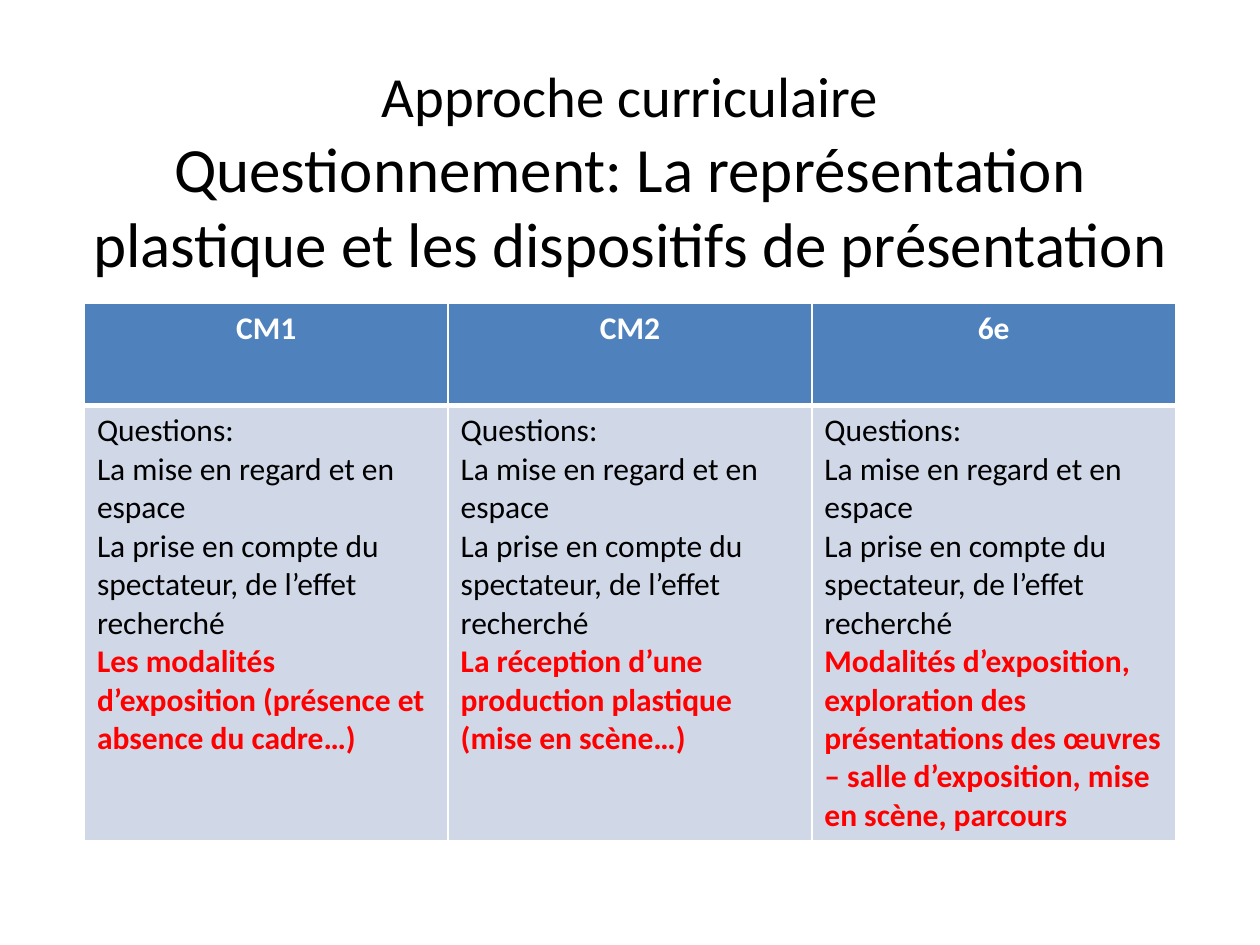
from lxml import etree
from pptx import Presentation
from pptx.dml.color import RGBColor
from pptx.enum.text import MSO_ANCHOR, MSO_AUTO_SIZE, PP_ALIGN
from pptx.oxml.ns import qn
from pptx.util import Inches, Pt

CENTER, LEFT = PP_ALIGN.CENTER, PP_ALIGN.LEFT
MIDDLE = MSO_ANCHOR.MIDDLE
NO_FIT = MSO_AUTO_SIZE.NONE

FONT = "Calibri"
BLACK = RGBColor(0x00, 0x00, 0x00)
WHITE = RGBColor(0xFF, 0xFF, 0xFF)
RED = RGBColor(0xFF, 0x00, 0x00)
BLUE = RGBColor(0x4F, 0x81, 0xBD)
PALE = RGBColor(0xD0, 0xD8, 0xE8)

SHARED = [
    "Questions:",
    "La mise en regard et en espace",
    "La prise en compte du spectateur, de l’effet recherché",
]
LEVELS = {
    "CM1": "Les modalités d’exposition (présence et absence du cadre…)",
    "CM2": "La réception d’une production plastique (mise en scène…)",
    "6e": "Modalités d’exposition, exploration des présentations des œuvres "
          "– salle d’exposition, mise en scène, parcours",
}


def add_run(para, text, size, color, bold=False):
    run = para.add_run()
    run.text = text
    font = run.font
    font.name, font.size, font.bold = FONT, Pt(size), bold
    font.color.rgb = color


def add_title(slide, left, top, width, height):
    title = slide.shapes.title
    title.left, title.top = left, top
    title.width, title.height = width, height
    frame = title.text_frame
    frame.word_wrap = True
    frame.auto_size = NO_FIT
    frame.vertical_anchor = MIDDLE
    para = frame.paragraphs[0]
    para.alignment = CENTER
    add_run(para, "Approche curriculaire", 32.4, BLACK)
    para.add_line_break()
    add_run(para, "Questionnement: La représentation", 36, BLACK)
    para.add_line_break()
    add_run(para, "plastique et les dispositifs de présentation", 36, BLACK)


def set_edges(cell, top, bottom):
    """Draw white edges, with the top and bottom widths in points."""
    props = cell._tc.get_or_add_tcPr()
    for side, width in (("L", 1), ("R", 1), ("T", top), ("B", bottom)):
        line = etree.SubElement(props, qn("a:ln" + side), w=str(Pt(width)))
        fill = etree.SubElement(line, qn("a:solidFill"))
        etree.SubElement(fill, qn("a:srgbClr"), val=str(WHITE))


def fill_cell(cell, fill, parts, align):
    """Write one paragraph for each (text, color, bold) part."""
    cell.fill.solid()
    cell.fill.fore_color.rgb = fill
    frame = cell.text_frame
    for i, (text, color, bold) in enumerate(parts):
        para = frame.add_paragraph() if i else frame.paragraphs[0]
        para.alignment = align
        add_run(para, text, 18, color, bold)


def add_grid(slide, left, top, width, height):
    count = len(LEVELS)
    grid = slide.shapes.add_table(2, count, left, top, width, height).table
    head = Inches(0.81)
    grid.rows[0].height, grid.rows[1].height = head, height - head
    for i, (level, focus) in enumerate(LEVELS.items()):
        grid.columns[i].width = width // count
        # Header
        cell = grid.cell(0, i)
        set_edges(cell, 1, 3)
        fill_cell(cell, BLUE, [(level, WHITE, True)], CENTER)
        # Shared questions, then the focus of the level
        cell = grid.cell(1, i)
        set_edges(cell, 3, 1)
        parts = [(text, BLACK, False) for text in SHARED]
        fill_cell(cell, PALE, parts + [(focus, RED, True)], LEFT)


def main():
    deck = Presentation()
    deck.slide_width, deck.slide_height = Inches(10), Inches(7.5)
    slide = deck.slides.add_slide(deck.slide_layouts[5])
    add_title(slide, Inches(0.5), Inches(0.3), Inches(9), Inches(2.11))
    add_grid(slide, Inches(0.67), Inches(2.41), Inches(8.66), Inches(4.23))
    deck.save("out.pptx")


if __name__ == "__main__":
    main()
